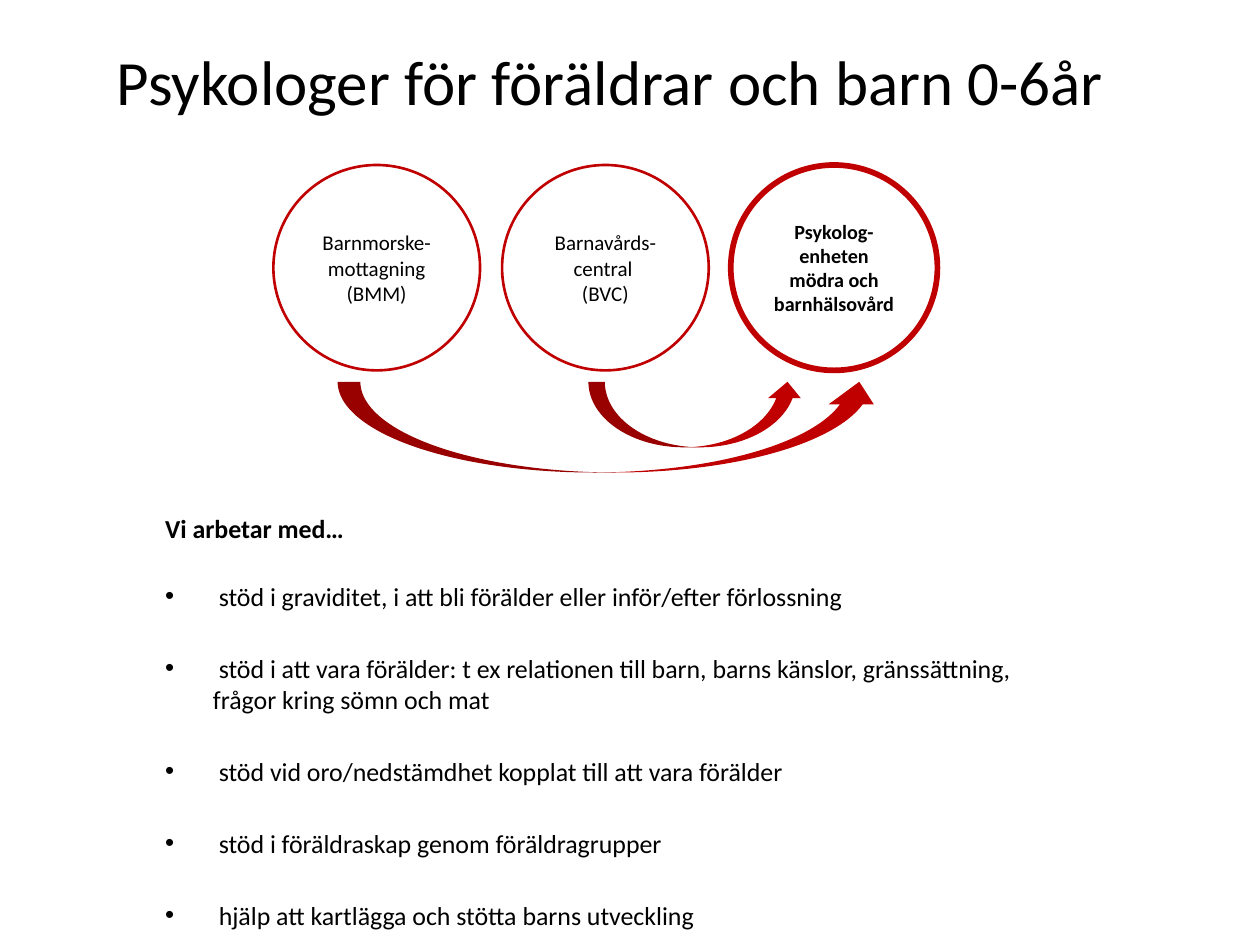
from pptx import Presentation
from pptx.dml.color import RGBColor
from pptx.enum.shapes import MSO_SHAPE as Shape
from pptx.enum.text import MSO_ANCHOR as Anchor, PP_ALIGN as Align
from pptx.oxml.ns import qn
from pptx.util import Inches, Pt
from lxml.etree import SubElement

RED = RGBColor(0xC0, 0x00, 0x00)
BLACK = RGBColor(0x00, 0x00, 0x00)
FONT = "Calibri"

TITLE = "Psykologer för föräldrar och barn 0-6år"
CIRCLES = [
    (["Barnmorske-", "mottagning", "(BMM)"], 1.5, 12, False),
    (["Barnavårds- central ", "(BVC)"], 1.5, 12, False),
    (["Psykolog-enheten mödra och barnhälsovård"], 3.25, 11.5, True),
]
CIRCLE_LEFT, CIRCLE_STEP = 2.17, 1.815
ARROWS = [(4.67, 1.71, 0.52), (2.68, 4.32, 0.72)]
HEADING = "Vi arbetar med…"
TASKS = [
    " stöd i graviditet, i att bli förälder eller inför/efter förlossning",
    " stöd i att vara förälder: t ex relationen till barn, barns känslor, "
    "gränssättning, frågor kring sömn och mat",
    " stöd vid oro/nedstämdhet kopplat till att vara förälder",
    " stöd i föräldraskap genom föräldragrupper",
    " hjälp att kartlägga och stötta barns utveckling",
]


def add_paragraph(frame, text, size, bold=False):
    first = frame.paragraphs[0]
    para = frame.add_paragraph() if first.runs else first
    span = para.add_run()
    span.text = text
    span.font.name = FONT
    span.font.size = Pt(size)
    span.font.bold = bold
    span.font.color.rgb = BLACK
    return para


def add_bullet(para, indent):
    props = para._p.get_or_add_pPr()
    props.set("marL", str(Inches(indent)))
    props.set("indent", str(-Inches(indent)))
    SubElement(props, qn("a:buFont"), typeface="Arial")
    SubElement(props, qn("a:buChar"), char="•")


def add_circle(page, left, lines, width, size, bold):
    circle = page.shapes.add_shape(
        Shape.OVAL, Inches(left), Inches(1.31), Inches(1.64), Inches(1.63))
    circle.shadow.inherit = False
    circle.fill.background()
    circle.line.color.rgb = RED
    circle.line.width = Pt(width)
    frame = circle.text_frame
    frame.word_wrap = True
    frame.vertical_anchor = Anchor.MIDDLE
    frame.margin_left = frame.margin_right = Inches(0.09)
    for line in lines:
        add_paragraph(frame, line, size, bold).alignment = Align.CENTER


def add_arrow(page, left, width, height):
    arrow = page.shapes.add_shape(
        Shape.CURVED_UP_ARROW, Inches(left), Inches(3.03),
        Inches(width), Inches(height))
    arrow.shadow.inherit = False
    arrow.fill.solid()
    arrow.fill.fore_color.rgb = RED
    arrow.line.fill.background()


def add_title(page):
    box = page.shapes.add_textbox(
        Inches(0.83), Inches(0.29), Inches(8.1), Inches(0.71))
    box.text_frame.word_wrap = False
    add_paragraph(box.text_frame, TITLE, 36)


def add_task_list(page):
    box = page.shapes.add_textbox(
        Inches(1.14), Inches(3.99), Inches(7.35), Inches(3.3))
    frame = box.text_frame
    frame.word_wrap = True
    frame.margin_left = frame.margin_right = Inches(0.17)
    frame.margin_top = frame.margin_bottom = Inches(0.08)
    add_paragraph(frame, HEADING, 14.8, True)
    for index, task in enumerate(TASKS):
        para = add_paragraph(frame, task, 14.8)
        para.space_before = Pt(23.4 if index else 20.8)
        add_bullet(para, 0.38)


def main():
    deck = Presentation()
    deck.slide_width, deck.slide_height = Inches(10), Inches(7.5)
    page = deck.slides.add_slide(deck.slide_layouts[6])
    for index, circle in enumerate(CIRCLES):
        add_circle(page, CIRCLE_LEFT + index * CIRCLE_STEP, *circle)
    for arrow in ARROWS:
        add_arrow(page, *arrow)
    add_task_list(page)
    add_title(page)
    deck.save("out.pptx")


if __name__ == "__main__":
    main()
